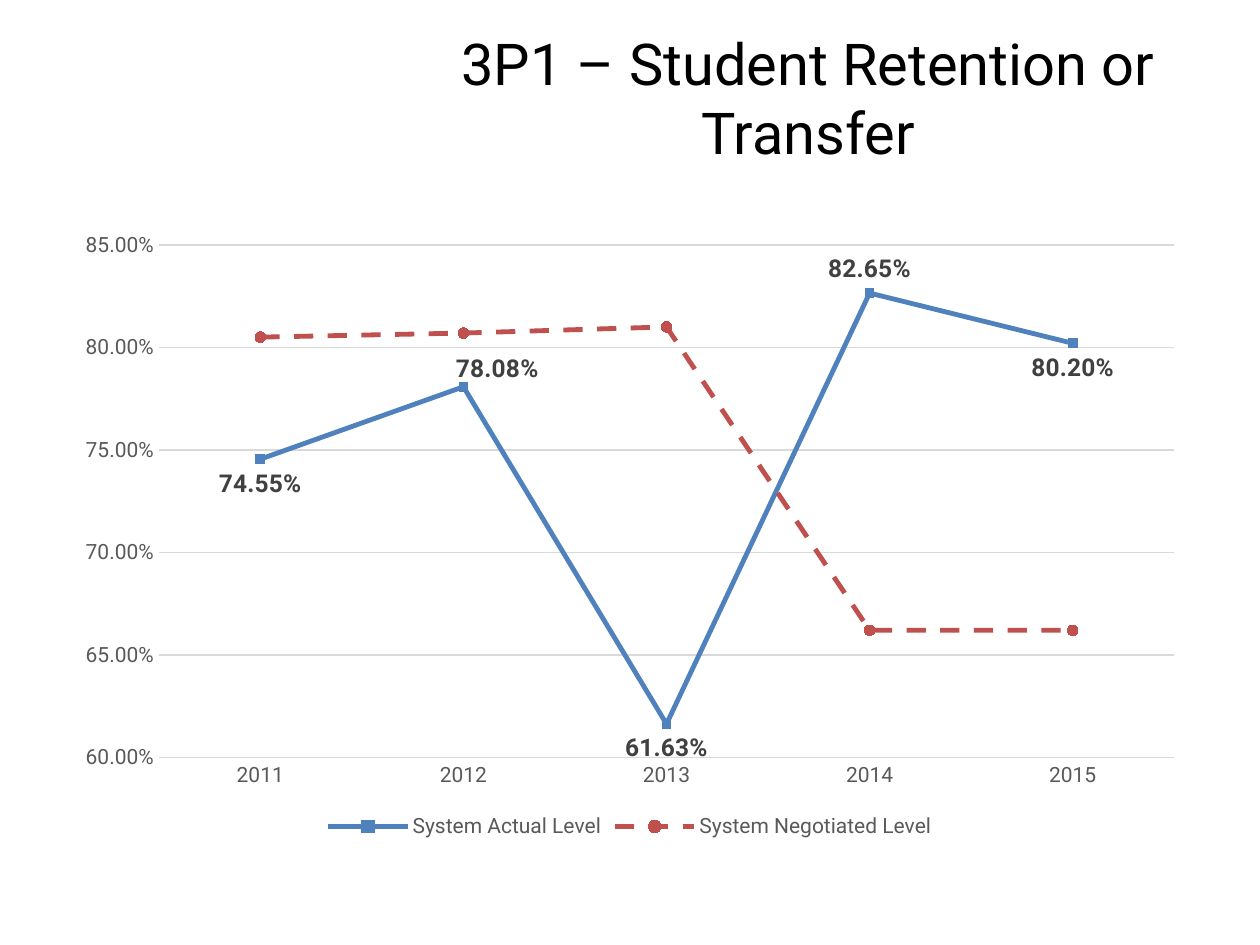
from dataclasses import dataclass
from lxml.etree import fromstring
from pptx import Presentation
from pptx.chart.data import CategoryChartData
from pptx.dml.color import RGBColor
from pptx.enum.chart import (XL_CHART_TYPE, XL_LABEL_POSITION, XL_LEGEND_POSITION,
                             XL_MARKER_STYLE, XL_TICK_MARK)
from pptx.enum.dml import MSO_LINE
from pptx.enum.text import MSO_ANCHOR, PP_ALIGN
from pptx.util import Pt


@dataclass
class Theme:
    face: str = "Roboto"
    black: str = "000000"
    gray: str = "595959"
    dark: str = "404040"
    rule: str = "D9D9D9"
    blue: str = "4F81BD"
    red: str = "C0504D"
    head: int = 33
    label: int = 14
    small: int = 12


theme = Theme()
PX = 914400 / 126
NS = "http://schemas.openxmlformats.org/drawingml/2006/chart"


def px(*nums):
    return [round(n * PX) for n in nums]


def style(font, size, color, bold=False):
    font.name, font.size, font.bold = theme.face, Pt(size), bold
    font.color.rgb = RGBColor.from_string(color)


deck = Presentation()
deck.slide_width, deck.slide_height = px(1260, 945)
slide = deck.slides.add_slide(deck.slide_layouts[6])

# Title
frame = slide.shapes.add_textbox(*px(388, 32, 840, 130)).text_frame
frame.word_wrap = True
frame.vertical_anchor = MSO_ANCHOR.MIDDLE
frame.text = "3P1 – Student Retention or Transfer"
para = frame.paragraphs[0]
para.alignment = PP_ALIGN.CENTER
style(para.runs[0].font, theme.head, theme.black)

# Chart data
data = CategoryChartData(number_format="0.00%")
data.categories = ["2011", "2012", "2013", "2014", "2015"]
data.add_series("System Actual Level", [0.7455, 0.7808, 0.6163, 0.8265, 0.802])
data.add_series("System Negotiated Level", [0.805, 0.807, 0.81, 0.662, 0.662])
chart = slide.shapes.add_chart(
    XL_CHART_TYPE.LINE_MARKERS, *px(63, 220, 1134, 624), data).chart
style(chart.font, theme.small, theme.gray)
chart.has_title = False
plot = chart.plots[0]
plot.vary_by_categories = False

# Legend
chart.has_legend = True
chart.legend.position = XL_LEGEND_POSITION.BOTTOM
chart.legend.include_in_layout = False
style(chart.legend.font, theme.small, theme.gray)

# Axes
years, rates = chart.category_axis, chart.value_axis
for axis in (years, rates):
    axis.major_tick_mark = axis.minor_tick_mark = XL_TICK_MARK.NONE
    style(axis.tick_labels.font, theme.small, theme.gray)
years.format.line.color.rgb = RGBColor.from_string(theme.rule)
years.format.line.width = Pt(1)
rates.minimum_scale, rates.maximum_scale, rates.major_unit = 0.6, 0.85, 0.05
rates.tick_labels.number_format = "0.00%"
rates.tick_labels.number_format_is_linked = False
rates.format.line.fill.background()
grid = rates.major_gridlines.format.line
grid.color.rgb = RGBColor.from_string(theme.rule)
grid.width = Pt(0.75)

# Lines and markers
looks = [(theme.blue, MSO_LINE.SOLID, XL_MARKER_STYLE.SQUARE, 5),
         (theme.red, MSO_LINE.DASH, XL_MARKER_STYLE.CIRCLE, 6)]
for row, (color, dash, mark, size) in zip(plot.series, looks):
    tone = RGBColor.from_string(color)
    row.smooth = False
    line = row.format.line
    line.color.rgb, line.width, line.dash_style = tone, Pt(2.75), dash
    row.marker.style, row.marker.size = mark, size
    row.marker.format.fill.solid()
    row.marker.format.fill.fore_color.rgb = tone
    row.marker.format.line.color.rgb = tone

# Value labels: below the line, except two above it
actual = plot.series[0]
tags = actual.data_labels
tags.show_value = True
tags.number_format, tags.number_format_is_linked = "0.00%", False
tags.position = XL_LABEL_POSITION.BELOW
style(tags.font, theme.label, theme.dark, True)
for spot in (1, 3):
    tag = actual.points[spot].data_label
    style(tag.font, theme.label, theme.dark, True)
    tag.position = XL_LABEL_POSITION.ABOVE

# Shift the 2012 label right, clear of the dashed line
shift = fromstring(f'<c:layout xmlns:c="{NS}"><c:manualLayout>'
                   '<c:x val="0.03"/><c:y val="0.01"/></c:manualLayout></c:layout>')
actual.points[1].data_label.font
tags._element.find(f"{{{NS}}}dLbl/{{{NS}}}idx").addnext(shift)

deck.save("out.pptx")
